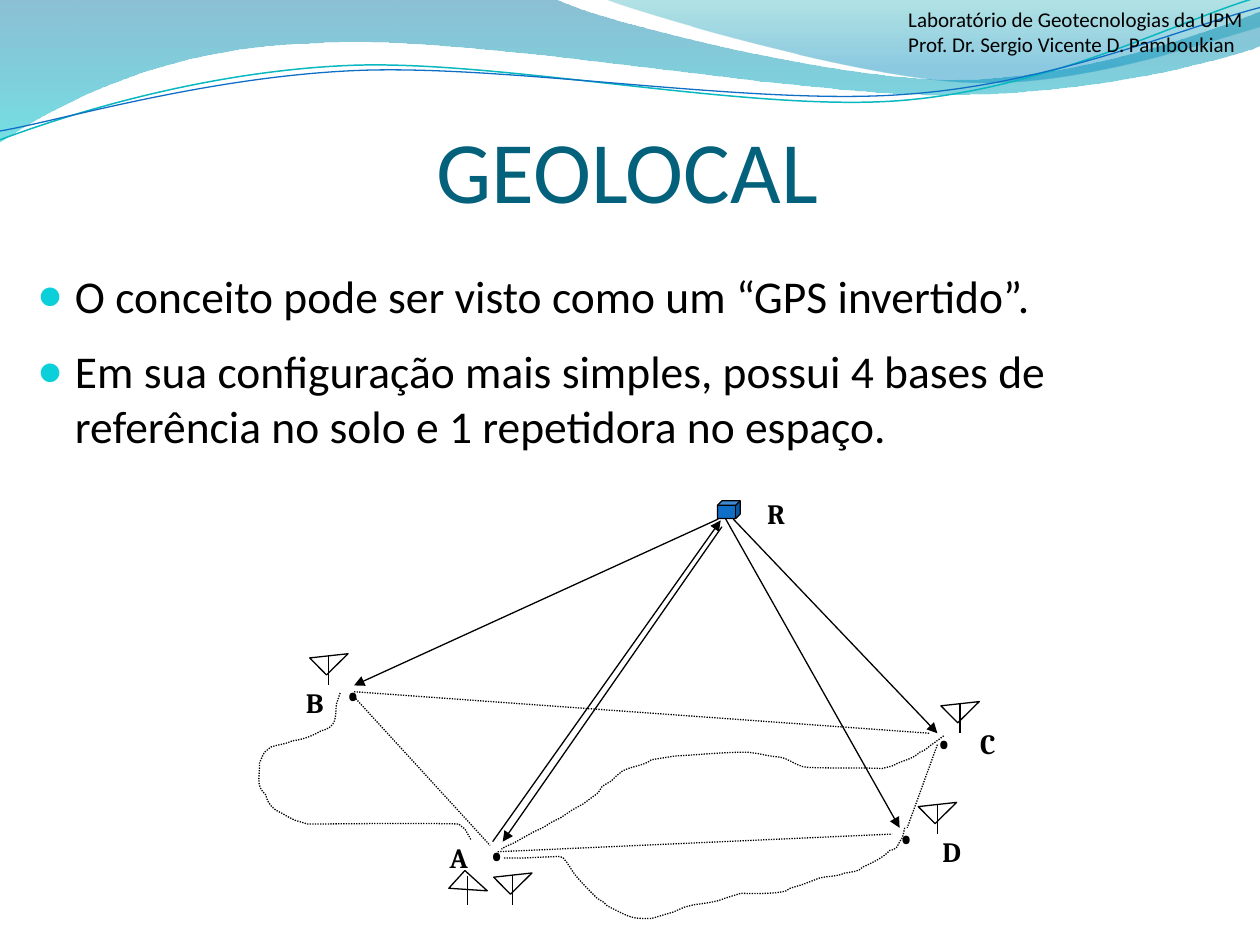
from lxml import etree
from pptx import Presentation, util as u
from pptx.dml.color import RGBColor
from pptx.enum import dml, shapes, text
from pptx.oxml import ns

# Grid of 100 columns by 75 rows
deck = Presentation()
deck.slide_width, deck.slide_height = u.Inches(10), u.Inches(7.5)
COL, ROW = deck.slide_width / 100, deck.slide_height / 75


def colour(value):
    return RGBColor.from_string(value)


def place(box, x, y):
    return round((box[0] + x) * COL), round((box[1] + y) * ROW)


def size(width, height):
    return round(width * COL), round(height * ROW)


def sub(parent, tag, **attributes):
    return etree.SubElement(parent, ns.qn(tag), **attributes)


def style_font(para, name, points, value, bold=False):
    font = para.font
    font.name, font.size, font.bold = name, u.Pt(points), bold
    font.color.rgb = colour(value)


def style_line(line, value="000000", width=0.75, dotted=False):
    line.color.rgb = colour(value)
    line.width = u.Pt(width)
    if dotted:
        line.dash_style = dml.MSO_LINE.ROUND_DOT


def add_text(page, box, x, y, width, height, lines, font, points, bold=False):
    label = page.shapes.add_textbox(*place(box, x, y), *size(width, height))
    frame = label.text_frame
    frame.word_wrap = False
    frame.auto_size = text.MSO_AUTO_SIZE.SHAPE_TO_FIT_TEXT
    frame.text = "\n".join(lines)
    for para in frame.paragraphs:
        style_font(para, font, points, "000000", bold)


def add_line(page, box, start, end, arrow=False, dotted=False):
    line = page.shapes.add_connector(
        shapes.MSO_CONNECTOR.STRAIGHT, *place(box, *start), *place(box, *end))
    style_line(line.line, dotted=dotted)
    properties = line.line._get_or_add_ln()
    if arrow:
        sub(properties, "a:tailEnd", type="triangle")
    sub(properties.getparent(), "a:effectLst")


def add_outline(page, box, steps, close=False):
    """Outline of (x, y) corners and (x1, y1, x2, y2, x, y) cubic curves."""
    corners = [place(box, *step[-2:]) for step in steps]
    builder = page.shapes.build_freeform(*corners[0])
    builder.add_line_segments(corners[1:], close=close)
    outline = builder.convert_to_shape()
    outline.shadow.inherit = False
    left, top = (min(axis) for axis in zip(*corners))
    segments = list(outline._element.iter(ns.qn("a:lnTo")))
    for segment, step in zip(segments, steps[1:]):
        if len(step) == 6:
            segment.tag = ns.qn("a:cubicBezTo")
            for index, control in enumerate((step[:2], step[2:4])):
                x, y = place(box, *control)
                point = etree.Element(ns.qn("a:pt"), x=str(x - left), y=str(y - top))
                segment.insert(index, point)
    return outline


def add_waves(page, box):
    # Translucent bands: outline, then (position, colour, opacity) stops
    lower = [(0, 0), (44, -0.1), (47.6, 1.7, 66.4, 6.3, 75.8, 6.3),
             (85.3, 6.3, 95.8, 2.6, 100, 0.9), (100.1, 3.6),
             (98.3, 4.4, 87, 7.6, 74.6, 7.5), (62.2, 7.5, 38.2, 2.8, 25.7, 3.4),
             (12.9, 3.6, 4.6, 8.3, -0.1, 11.3)]
    upper = [(47.9, -0.1), (50.9, 1.1, 68.2, 6.2, 76.9, 6.5),
             (85.6, 6.9, 96.1, 3.2, 100, 2.1), (100, 0)]
    for steps, stops in [(lower, [(0, "0074A1", 45), (1, "00C6CF", 55)]),
                         (upper, [(0, "00A1A9", 30), (0.8, "008BBF", 45)])]:
        band = add_outline(page, box, steps, close=True)
        band.line.fill.background()
        band.fill.gradient()
        band.fill.gradient_angle = 270
        for stop, (position, value, _) in zip(band.fill.gradient_stops, stops):
            stop.position = position
            stop.color.rgb = colour(value)
        for node, (_, _, opacity) in zip(band._element.spPr.iter(ns.qn("a:srgbClr")), stops):
            sub(node, "a:alpha", val=str(opacity * 1000))

    # Thin wave lines
    teal = [(0, 11.1), (4.8, 9.3, 15.8, 5.7, 27.7, 5.2),
            (39.5, 4.7, 59.3, 8.9, 71.3, 8), (83.3, 7.1, 93.8, 1.5, 99.8, -0.2)]
    blue = [(0, 10.4), (4.7, 9.6, 16.4, 6.1, 28.3, 5.6),
            (40.3, 5.1, 59.7, 8.4, 71.7, 7.5), (83.6, 6.7, 94.1, 2.1, 100, 0.6)]
    pair = page.shapes.add_group_shape()
    for steps, value, width in [(teal, "0AB8BF", 0.85), (blue, "0F6FC6", 0.75)]:
        wave = add_outline(pair, box, steps)
        wave.fill.background()
        style_line(wave.line, value, width)


def fill_title(title, box, words):
    (title.left, title.top), (title.width, title.height) = place(box, 0, 0), size(*box[2:])
    frame = title.text_frame
    frame.text = words
    frame.auto_size = text.MSO_AUTO_SIZE.NONE
    frame.vertical_anchor = text.MSO_ANCHOR.BOTTOM
    frame.margin_left = frame.margin_right = frame.margin_bottom = 0
    para = frame.paragraphs[0]
    para.alignment = text.PP_ALIGN.CENTER
    style_font(para, "Calibri", 50, "04617B")


def fill_body(body, box, items):
    (body.left, body.top), (body.width, body.height) = place(box, 0, 0), size(*box[2:])
    frame = body.text_frame
    frame.text = "\n".join(items)
    frame.auto_size = text.MSO_AUTO_SIZE.NONE
    for index, para in enumerate(frame.paragraphs):
        para.space_before, para.space_after = u.Pt(6 if index else 0), u.Pt(6)
        properties = para._p.get_or_add_pPr()
        properties.set("marL", str(u.Inches(0.3)))
        properties.set("indent", str(-u.Inches(0.3)))
        sub(sub(properties, "a:buClr"), "a:srgbClr", val="0BD0D9")
        sub(properties, "a:buSzPct", val="95000")
        sub(properties, "a:buChar", char="●")
        style_font(para, "Calibri", 26, "000000")


def add_antenna(page, box, x, y, width=2.4, height=1.9, angle=315.4, mast=(1.2, 0.95)):
    foot = (x + mast[0], y + mast[1])
    add_line(page, box, foot, (foot[0], foot[1] + 2.35))
    dish = page.shapes.add_shape(
        shapes.MSO_SHAPE.RIGHT_TRIANGLE, *place(box, x, y), *size(width, height))
    dish.rotation = angle
    dish.shadow.inherit = False
    dish.fill.background()
    style_line(dish.line)


def add_diagram(page, box):
    group = page.shapes.add_group_shape()

    # Repeater in space
    cube = group.shapes.add_shape(shapes.MSO_SHAPE.CUBE, *place(box, 36.95, 0.75), *size(1.8, 1.4))
    cube.shadow.inherit = False
    cube.fill.solid()
    cube.fill.fore_color.rgb = colour("0F6FC6")
    style_line(cube.line)

    # Station dots
    for x, y in [(53.2, 17.3), (50.2, 24.8), (6.3, 13.5), (17.7, 26.2)]:
        add_text(group, box, x, y, 3.6, 5, ["•"], "Cambria", 24)

    # Signals, then ground baselines
    for start, end in [((37, 2.2), (8.1, 15.4)), ((37.6, 2.2), (51.4, 26.7)),
                       ((38.2, 2.2), (54.4, 19.2)), ((19.1, 27.8), (37.2, 2.3)),
                       ((37.3, 2.8), (19.9, 27.8))]:
        add_line(group, box, start, end, arrow=True)
    for start, end in [((8.1, 16.3), (18.9, 28.1)), ((8.1, 15.9), (53.8, 19.2)),
                       ((54.4, 20.1), (52, 26.7)), ((19.5, 28.6), (50.8, 27.2))]:
        add_line(group, box, start, end, dotted=True)

    # Station letters
    for letter, x, y, width, height in [
            ("D", 53.8, 26.7, 2.5, 2.2), ("C", 56.8, 18.2, 2.5, 2.2), ("R", 39.9, -0.1, 3.6, 3.7),
            ("A", 14.7, 27.2, 2.5, 2.2), ("B", 3.3, 14.9, 2.5, 2.2)]:
        add_text(group, box, x, y, width, height, [letter], "Cambria", 16, bold=True)

    # Antennas: one receiver per base, and the transmitter at A
    for x, y in [(19.5, 29.5), (4.9, 12.1), (53.2, 23.9), (55, 15.9)]:
        add_antenna(group, box, x, y)
    add_antenna(group, box, 16.2, 30.4, 1.9, 2.4, 132.2, mast=(0.9, 0.1))

    # Terrain between the bases
    west = [(7, 16), (6.7, 16.9), (6.6, 17.9, 6.8, 18.7, 5.5, 19), (4.8, 19.4, 4.1, 19.7, 3.2, 19.8),
            (2.6, 20.1, 2, 20.1, 1.5, 20.3), (1, 20.7), (0.8, 21, 0.8, 21.2, 0.6, 21.5),
            (0.6, 23, 0.3, 23.3, 1.1, 24.1), (1.2, 24.7, 1.7, 25.3, 2.3, 25.5), (2.8, 25.8),
            (3.4, 26.1), (4.4, 26.4), (8.7, 26.4, 12, 26.3, 16.4, 26.4), (16.9, 26.8),
            (17.3, 27.5), (17.4, 27.7)]
    south = [(51.8, 26.7), (51.7, 27.1, 51.7, 27.5, 51.4, 27.8), (51.2, 28.2, 51.2, 28.4, 50.6, 28.5),
             (50.2, 29, 49.2, 29.5, 48.5, 29.8), (48.2, 30.2, 47.5, 30.2, 47, 30.3),
             (46.4, 30.6, 45.7, 30.5, 45, 30.7), (43.7, 31.2), (42.7, 31.5), (42.4, 31.7),
             (41.4, 32, 39.2, 31.9, 38.8, 31.9), (37.5, 32.3), (36.9, 32.6, 35.8, 32.7, 35.1, 32.8),
             (34.7, 32.9), (34.3, 33), (33.4, 33.4), (32.7, 33.6), (31.7, 33.9),
             (30.5, 33.9, 30.2, 33.9, 29.2, 33.4), (28.2, 32.9), (27.9, 32.6), (27.4, 32.3),
             (26.8, 31.7, 26.2, 31.1, 25.7, 30.5), (25.3, 30, 25.1, 29.5, 24.7, 29.1),
             (24.5, 28.9, 24, 29, 23.7, 29), (21.1, 29.1, 22.3, 29.1, 20, 29.1)]
    north = [(54.9, 19.4), (54.1, 20), (53.6, 20.3, 53.6, 20.5, 53, 20.7),
             (52.5, 21.2, 51.9, 21.3, 51.2, 21.6), (50.8, 21.8), (50, 22),
             (48, 21.9, 46, 22, 44, 21.9), (43.2, 21.8, 42.6, 21.2, 41.9, 21.1), (41.1, 21),
             (40.1, 20.8), (39.3, 20.7), (37.3, 20.7, 35.6, 20.9, 33.6, 21), (31.7, 21.3),
             (31.1, 21.8, 30.1, 21.8, 29.4, 22.2), (28.9, 22.6), (28.5, 23), (27.8, 23.4),
             (27.6, 23.7, 27.5, 24, 27.1, 24.2), (26.3, 24.8), (25.4, 25.3), (24.5, 25.9),
             (23.7, 26.3), (23.3, 26.6, 22.9, 26.8, 22.4, 27), (21.5, 27.5), (20.8, 27.9),
             (20.1, 28.2), (19.8, 28.4)]
    for steps in (west, south, north):
        terrain = add_outline(group, box, steps)
        terrain.fill.background()
        style_line(terrain.line, dotted=True)


def main():
    page = deck.slides.add_slide(deck.slide_layouts[1])
    add_waves(page, (0, 0, 100, 12))
    add_text(page, (71.1, 0), 0, 0, 28.9, 5,
             ["Laboratório de Geotecnologias da UPM", "Prof. Dr. Sergio Vicente D. Pamboukian"],
             "Calibri", 12)
    fill_title(page.shapes.title, (4.8, 7.15, 90, 10.4), "GEOLOCAL")
    fill_body(page.placeholders[1], (1.95, 20.75, 96.1, 52.2), [
        "O conceito pode ser visto como um “GPS invertido”.",
        "Em sua configuração mais simples, possui 4 bases de referência no solo"
        " e 1 repetidora no espaço."])
    add_diagram(page, (20, 39, 60, 34))
    deck.save("out.pptx")


if __name__ == "__main__":
    main()
